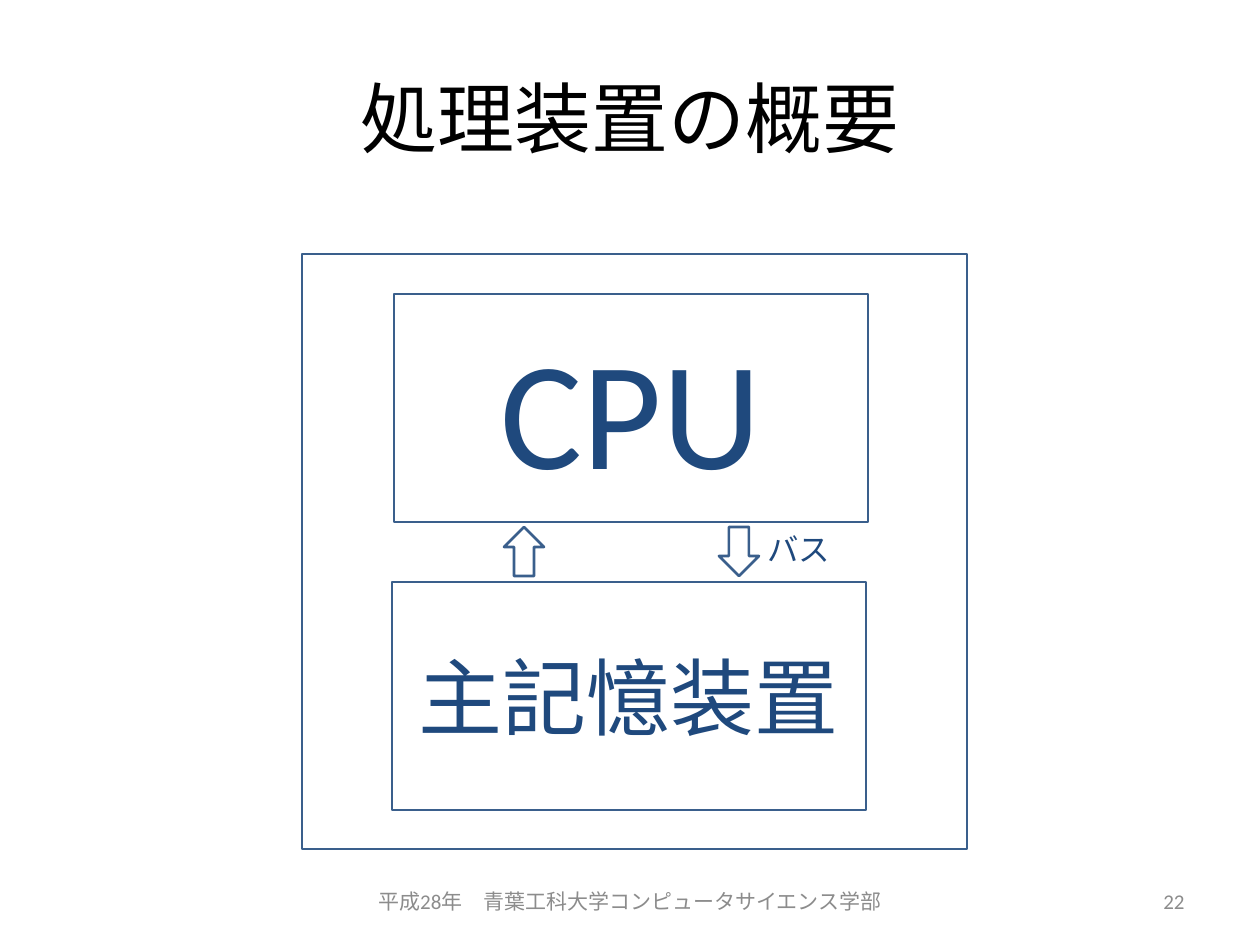
import pptx
import pptx.util
import pptx.dml.color
import pptx.enum.shapes
import pptx.enum.text

PX = pptx.util.Inches(1) / 126
FONT = "Calibri"
COLORS = {
    "title": "000000",
    "footer": "8C8C8C",
    "fill": "FFFFFF",
    "line": "3A5F8C",
    "label": "1F497D",
}
SHAPES = pptx.enum.shapes.MSO_SHAPE
ALIGN = pptx.enum.text.PP_ALIGN
ANCHOR = pptx.enum.text.MSO_ANCHOR


def scale(*lengths):
    return [pptx.util.Emu(round(length * PX)) for length in lengths]


def color(name):
    return pptx.dml.color.RGBColor.from_string(COLORS[name])


def write(shape, text, size, color_name, align=ALIGN.CENTER, anchor=ANCHOR.MIDDLE):
    frame = shape.text_frame
    frame.word_wrap = True
    frame.vertical_anchor = anchor
    para = frame.paragraphs[0]
    para.text = text
    para.alignment = align
    para.font.name = FONT
    para.font.size = pptx.util.Pt(size)
    para.font.color.rgb = color(color_name)
    return para


def set_title(page, text, place):
    title = page.shapes.title
    title.left, title.top, title.width, title.height = scale(*place)
    write(title, text, 44, "title")


def add_text(page, place, text, size, color_name, align, anchor=ANCHOR.MIDDLE):
    box = page.shapes.add_textbox(*scale(*place))
    return write(box, text, size, color_name, align, anchor)


def add_outline(page, kind, place):
    shape = page.shapes.add_shape(kind, *scale(*place))
    shape.shadow.inherit = False
    shape.fill.solid()
    shape.fill.fore_color.rgb = color("fill")
    shape.line.color.rgb = color("line")
    shape.line.width = pptx.util.Pt(1.5)
    return shape


def add_unit(page, left, top, text, size):
    unit = add_outline(page, SHAPES.RECTANGLE, (left, top, 474, 228))
    write(unit, text, size, "label")


def add_bus_arrow(page, left, rotation):
    arrow = add_outline(page, SHAPES.DOWN_ARROW, (left, 527, 40, 49))
    arrow.rotation = rotation


def main():
    deck = pptx.Presentation()
    deck.slide_width, deck.slide_height = scale(1260, 945)
    page = deck.slides.add_slide(deck.slide_layouts[5])

    set_title(page, "処理装置の概要", (63, 38, 1134, 157))
    add_text(page, (357, 876, 546, 50), "平成28年　青葉工科大学コンピュータサイエンス学部",
             12, "footer", ALIGN.CENTER)
    add_text(page, (903, 876, 294, 50), "22", 12, "footer", ALIGN.RIGHT)

    add_outline(page, SHAPES.RECTANGLE, (302, 254, 665, 595))
    add_unit(page, 394, 294, "CPU", 88)
    add_unit(page, 392, 582, "主記憶装置", 48)
    add_bus_arrow(page, 719, 0)
    add_bus_arrow(page, 504, 180)
    bus_label = add_text(page, (755, 527, 89, 49), "バス", 18, "label",
                         ALIGN.LEFT, ANCHOR.TOP)
    bus_label.line_spacing = 0.95

    deck.save("out.pptx")


if __name__ == "__main__":
    main()
